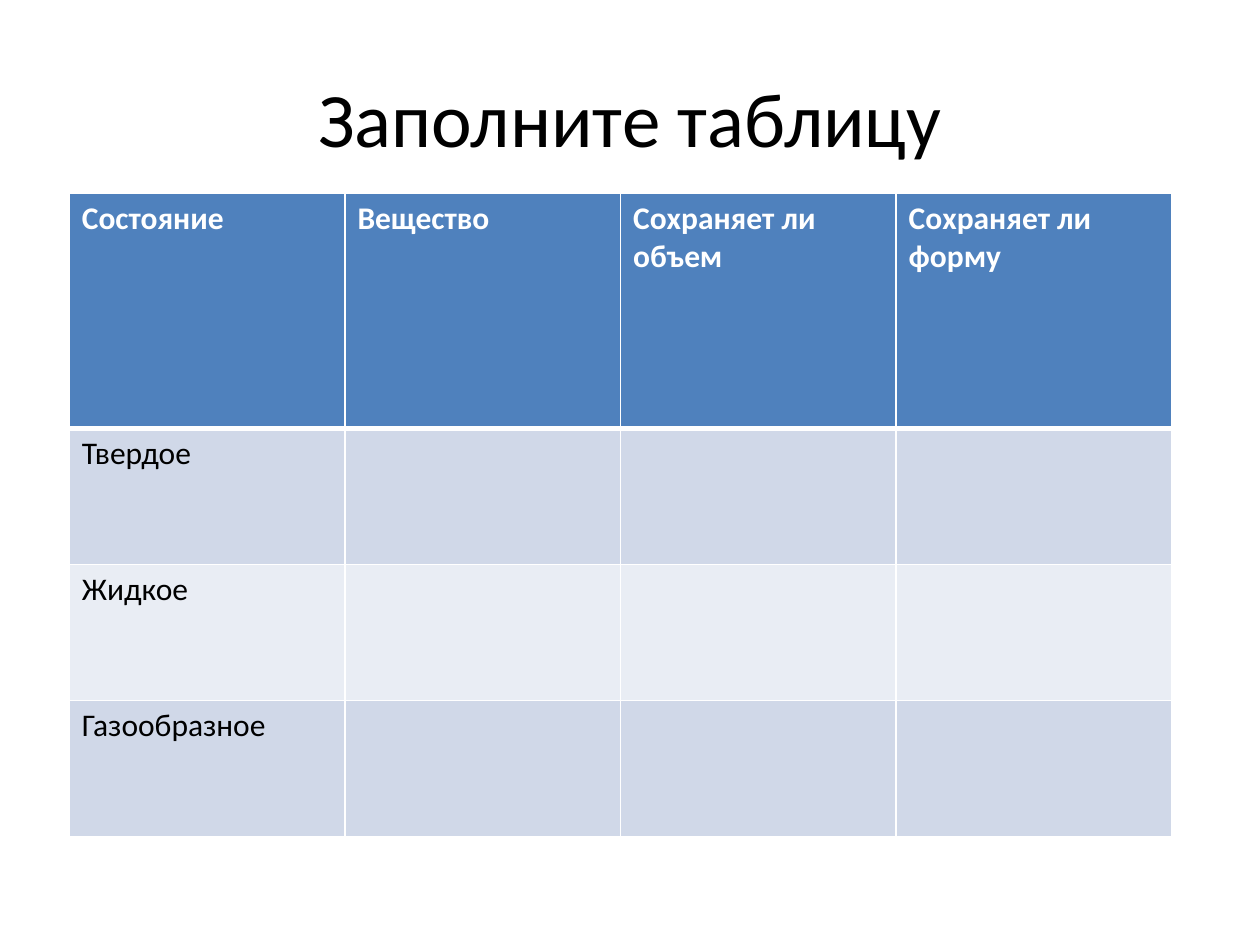
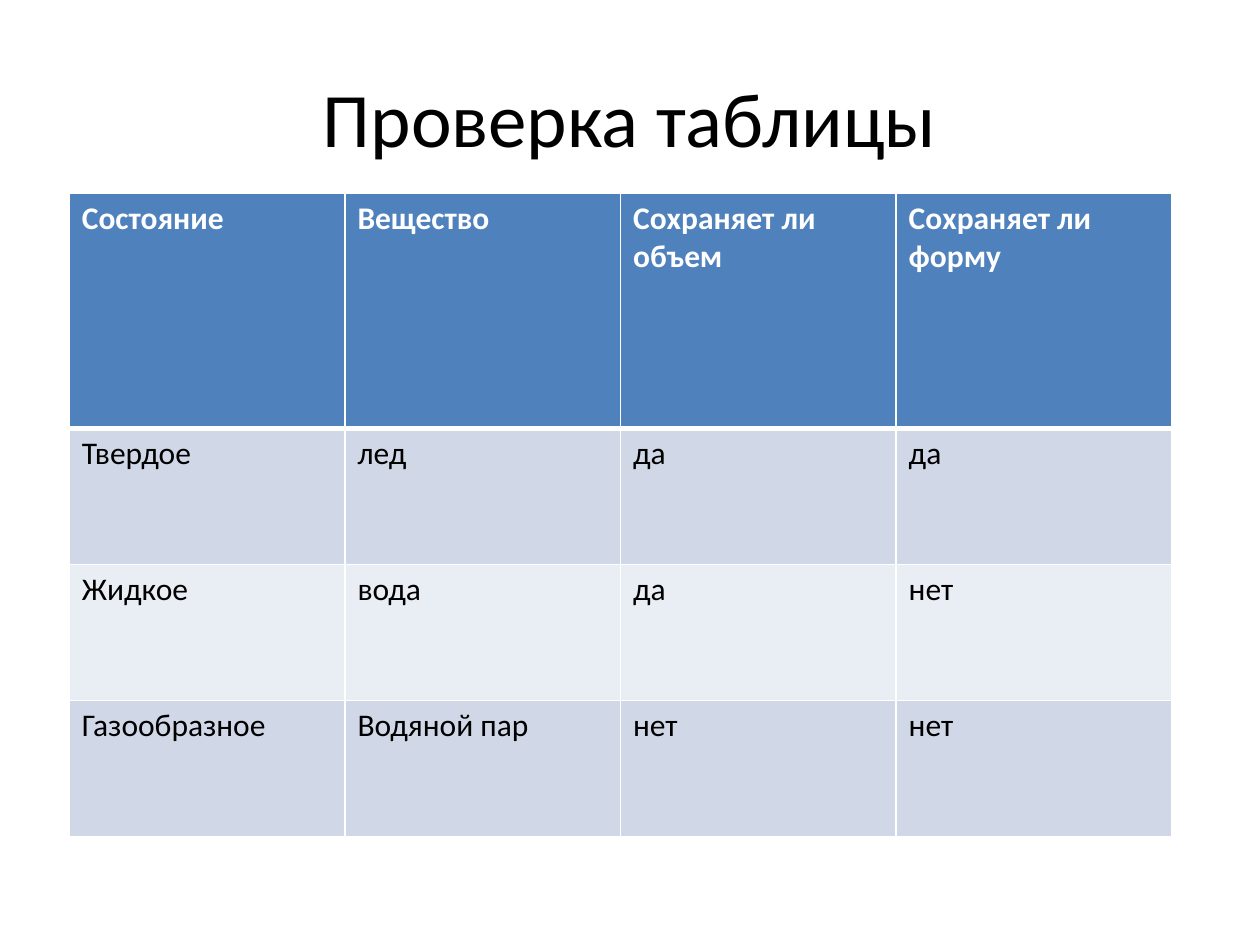
"""Build two slides on the states of matter: a table to fill in and its answers."""
import pptx
import pptx.dml.color
import pptx.enum.text
import pptx.oxml.ns
import pptx.util
from lxml import etree
from pptx.util import Inches

HEADER = ["Состояние", "Вещество", "Сохраняет ли объем", "Сохраняет ли форму"]
STATES = ["Твердое", "Жидкое", "Газообразное"]
ANSWERS = [
    ["лед", "да", "да"],
    ["вода", "да", "нет"],
    ["Водяной пар", "нет", "нет"],
]
BLANKS = [[""] * 3] * len(STATES)
SLIDES = [("Заполните таблицу", BLANKS), ("Проверка таблицы", ANSWERS)]

COLORS = {
    "text": "000000",
    "white": "FFFFFF",
    "header": "4F81BD",
    "odd": "D0D8E8",
    "even": "E9EDF4",
}
FONT = "Calibri"
TITLE_BOX = (0.5, 0.3, 9, 1.25)
TABLE_BOX = (0.55, 1.53, 8.75, 5.11)
HEADER_HEIGHT = 1.87


def rgb(name):
    return pptx.dml.color.RGBColor.from_string(COLORS[name])


def write(tf, text, size=18, color="text", bold=False, align=None):
    p = tf.paragraphs[0]
    p.alignment = align
    r = p.add_run()
    r.text = text
    r.font.name = FONT
    r.font.size = pptx.util.Pt(size)
    r.font.bold = bold
    r.font.color.rgb = rgb(color)


def add_borders(cell, bottom):
    tcPr = cell._tc.get_or_add_tcPr()
    for side, width in (("L", 1), ("R", 1), ("T", 1), ("B", bottom)):
        ln = etree.SubElement(tcPr, pptx.oxml.ns.qn(f"a:ln{side}"), w=str(pptx.util.Pt(width)))
        fill = etree.SubElement(ln, pptx.oxml.ns.qn("a:solidFill"))
        etree.SubElement(fill, pptx.oxml.ns.qn("a:srgbClr"), val=COLORS["white"])


def add_title(s, text):
    tf = s.shapes.add_textbox(*map(Inches, TITLE_BOX)).text_frame
    tf.word_wrap = True
    tf.vertical_anchor = pptx.enum.text.MSO_ANCHOR.MIDDLE
    write(tf, text, size=44, align=pptx.enum.text.PP_ALIGN.CENTER)


def add_states_table(s, answers):
    rows = [HEADER] + [[state] + row for state, row in zip(STATES, answers)]
    width, height = TABLE_BOX[2:]
    body_height = (height - HEADER_HEIGHT) / len(STATES)
    table = s.shapes.add_table(len(rows), len(HEADER), *map(Inches, TABLE_BOX)).table
    for column in table.columns:
        column.width = Inches(width / len(HEADER))
    for i, texts in enumerate(rows):
        is_header = i == 0
        table.rows[i].height = Inches(HEADER_HEIGHT if is_header else body_height)
        band = "header" if is_header else ("even", "odd")[i % 2]
        for j, text in enumerate(texts):
            cell = table.cell(i, j)
            add_borders(cell, bottom=3 if is_header else 1)
            cell.fill.solid()
            cell.fill.fore_color.rgb = rgb(band)
            if text:
                write(cell.text_frame, text, bold=is_header,
                      color="white" if is_header else "text")


def main():
    prs = pptx.Presentation()
    prs.slide_width, prs.slide_height = Inches(10), Inches(7.5)
    for title, answers in SLIDES:
        s = prs.slides.add_slide(prs.slide_layouts[6])
        add_title(s, title)
        add_states_table(s, answers)
    prs.save("out.pptx")


if __name__ == "__main__":
    main()
